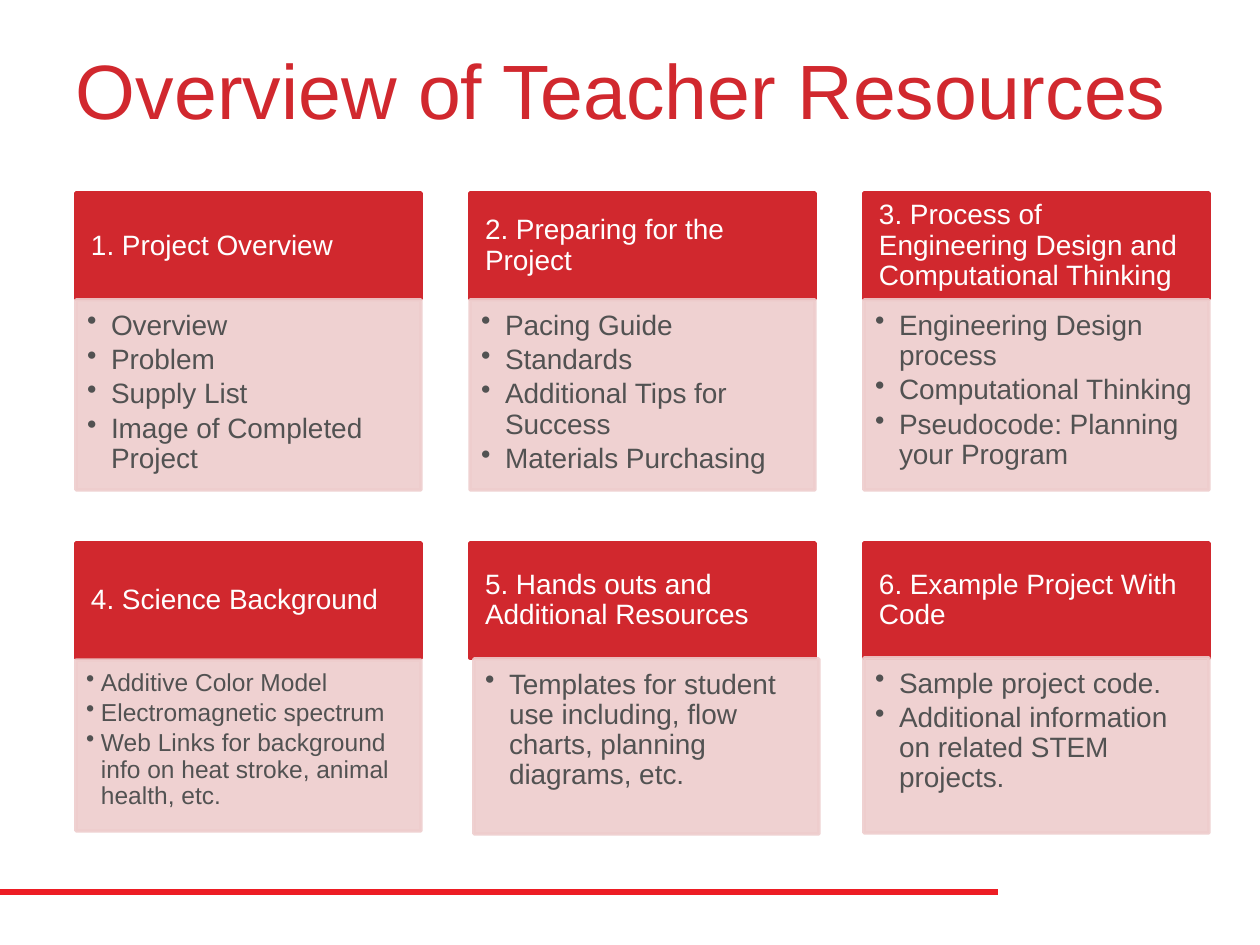
from dataclasses import dataclass
from pptx import Presentation
from pptx.dml.color import RGBColor
from pptx.enum.shapes import MSO_CONNECTOR as Link, MSO_SHAPE as Kind
from pptx.enum.text import MSO_ANCHOR as Anchor, MSO_AUTO_SIZE as Fit, PP_ALIGN as Align
from pptx.oxml.ns import qn
from pptx.util import Pt
from lxml.etree import SubElement

SCALE = 914400 / 126
RED, PINK, GREY, WHITE = "D1282E", "EECDCD", "525252", "FFFFFF"
LEFT, STEP, WIDE = 76, 394, 345


@dataclass
class Row:
    top: int
    head: int


@dataclass
class Card:
    title: str
    items: list[str]
    top: int = 300
    tall: int = 190
    shift: int = 0
    size: int = 16
    dent: int = 24
    pad: tuple[int, int, int, int] = (11, 11, 15, 18)


ROWS = [Row(193, 106), Row(543, 115)]
CARDS = [
    Card("1. Project Overview",
         ["Overview", "Problem", "Supply List", "Image of Completed Project"]),
    Card("2. Preparing for the Project",
         ["Pacing Guide", "Standards", "Additional Tips for Success", "Materials Purchasing"]),
    Card("3. Process of Engineering Design and Computational Thinking",
         ["Engineering Design process", "Computational Thinking",
          "Pseudocode: Planning your Program"]),
    Card("4. Science Background",
         ["Additive Color Model", "Electromagnetic spectrum",
          "Web Links for background info on heat stroke, animal health, etc."],
         top=660, tall=171, size=14, dent=15, pad=(10, 10, 14, 15)),
    Card("5. Hands outs and Additional Resources",
         ["Templates for student use including, flow charts, planning diagrams, etc."],
         top=659, tall=175, shift=4),
    Card("6. Example Project With Code",
         ["Sample project code.", "Additional information on related STEM projects."],
         top=658, tall=175),
]


def px(num: int) -> int:
    return round(num * SCALE)


def paint(hue: str) -> RGBColor:
    return RGBColor.from_string(hue)


def write(shape, lines: list[str], *, size: int, hue: str, anchor=Anchor.MIDDLE,
          pad=(13, 6, 13, 6), dent: int = 0, lead: float = 1.0, after: float = 0) -> None:
    frame = shape.text_frame
    frame.word_wrap = True
    frame.auto_size = Fit.NONE
    frame.vertical_anchor = anchor
    frame.margin_left, frame.margin_top, frame.margin_right, frame.margin_bottom = map(px, pad)
    for pos, line in enumerate(lines):
        para = frame.paragraphs[0] if pos == 0 else frame.add_paragraph()
        para.text = line
        para.alignment = Align.LEFT
        para.line_spacing = lead
        para.space_after = Pt(after)
        if dent:
            para.level = 1
            props = para._p.get_or_add_pPr()
            props.set("marL", str(px(dent)))
            props.set("indent", str(-px(dent)))
            SubElement(props, qn("a:buChar")).set("char", "•")
        font = para.font
        font.name, font.size = "Arial", Pt(size)
        font.color.rgb = paint(hue)


def box(slide, left: int, top: int, tall: int, hue: str, alpha: int = 100):
    shape = slide.shapes.add_shape(Kind.RECTANGLE, px(left), px(top), px(WIDE), px(tall))
    shape.shadow.inherit = False
    shape.fill.solid()
    shape.line.width = Pt(2)
    for fill in (shape.fill.fore_color, shape.line.color):
        fill.rgb = paint(hue)
    if alpha < 100:
        for node in list(shape._element.spPr.iter(qn("a:srgbClr"))):
            SubElement(node, qn("a:alpha")).set("val", str(alpha * 1000))
    return shape


def draw(slide, card: Card, row: Row, left: int) -> None:
    head = box(slide, left, row.top, row.head, RED)
    write(head, [card.title], size=16, hue=WHITE, pad=(15, 9, 15, 9), lead=0.9)
    body = box(slide, left + card.shift, card.top, card.tall, PINK, 90)
    write(body, card.items, size=card.size, hue=GREY, anchor=Anchor.TOP, pad=card.pad,
          dent=card.dent, lead=0.9, after=card.size * 0.15)


def rule(slide, top: int, end: int) -> None:
    line = slide.shapes.add_connector(Link.STRAIGHT, 0, px(top), px(end), px(top))
    line.line.color.rgb = paint("ED1D24")
    line.line.width = Pt(3)
    SubElement(line._element.spPr, qn("a:effectLst"))


def main() -> None:
    deck = Presentation()
    deck.slide_width, deck.slide_height = px(1260), px(945)
    slide = deck.slides.add_slide(deck.slide_layouts[5])
    rule(slide, 892, 998)
    title = slide.shapes.title
    title.left, title.top, title.width, title.height = map(px, (63, 10, 1134, 158))
    write(title, ["Overview of Teacher Resources"], size=44, hue=RED)
    for pos, card in enumerate(CARDS):
        line, col = divmod(pos, 3)
        draw(slide, card, ROWS[line], LEFT + col * STEP)
    deck.save("out.pptx")


if __name__ == "__main__":
    main()
